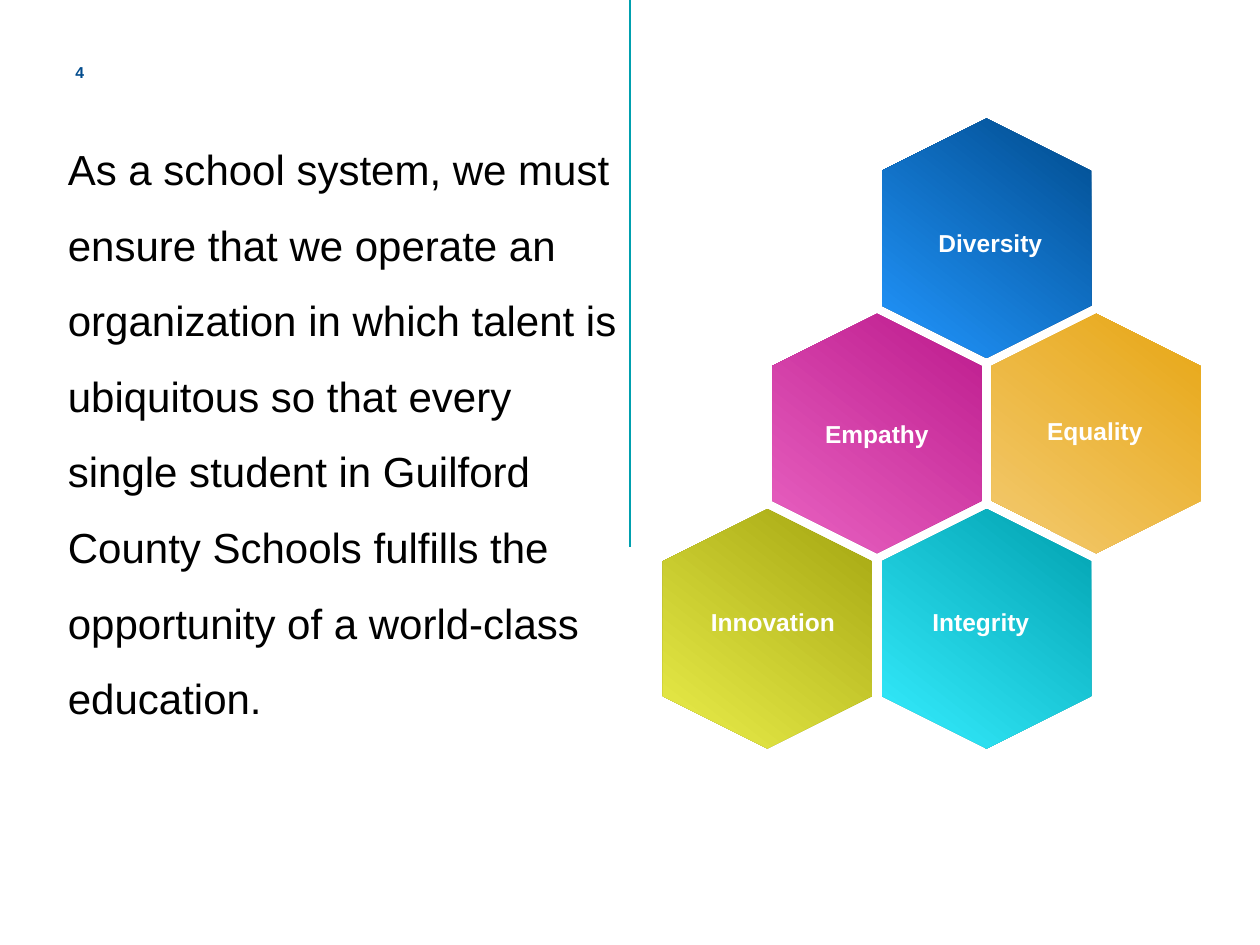
from lxml import etree
from pptx import Presentation
from pptx.dml.color import RGBColor
from pptx.enum.shapes import MSO_CONNECTOR, MSO_SHAPE
from pptx.enum.text import MSO_ANCHOR, PP_ALIGN
from pptx.oxml.ns import qn
from pptx.util import Inches, Pt

STRAIGHT = MSO_CONNECTOR.STRAIGHT
HEXAGON = MSO_SHAPE.HEXAGON
TOP, MIDDLE = MSO_ANCHOR.TOP, MSO_ANCHOR.MIDDLE
LEFT, CENTER = PP_ALIGN.LEFT, PP_ALIGN.CENTER

BLACK = RGBColor(0x00, 0x00, 0x00)
WHITE = RGBColor(0xFF, 0xFF, 0xFF)
NAVY = RGBColor(0x00, 0x4B, 0x8D)
BLUE = RGBColor(0x22, 0x97, 0xFF)
MAGENTA = RGBColor(0xBC, 0x1A, 0x8C)
PINK = RGBColor(0xE9, 0x63, 0xC2)
AMBER = RGBColor(0xE7, 0xA6, 0x14)
SAND = RGBColor(0xF3, 0xCA, 0x70)
TEAL = RGBColor(0x00, 0xA0, 0xAF)
CYAN = RGBColor(0x36, 0xEE, 0xFF)
OLIVE = RGBColor(0xA3, 0xA5, 0x10)
LIME = RGBColor(0xEB, 0xEE, 0x4B)

STATEMENT = (
    "As a school system, we must ensure that we operate an organization "
    "in which talent is ubiquitous so that every single student in Guilford "
    "County Schools fulfills the opportunity of a world-class education."
)


def add_text(page, text, area, font, align=LEFT, anchor=TOP):
    """Add a one-paragraph text box; area is left, top, width, height in inches."""
    box = page.shapes.add_textbox(*(Inches(length) for length in area))
    box.text_frame.word_wrap = True
    box.text_frame.vertical_anchor = anchor
    para = box.text_frame.paragraphs[0]
    para.alignment = align
    span = para.add_run()
    span.text = text
    for name, value in {"name": "Arial", **font}.items():
        setattr(span.font, name, value)
    return para


deck = Presentation()
deck.slide_width, deck.slide_height = Inches(10), Inches(7.5)
page = deck.slides.add_slide(deck.slide_layouts[6])

divider = page.shapes.add_connector(STRAIGHT, Inches(5), 0, Inches(5), Inches(4.34))
divider.line.color.rgb = TEAL
divider.line.width = Pt(1)
etree.SubElement(divider._element.spPr, qn("a:effectLst"))

statement = add_text(page, STATEMENT, (0.44, 0.89, 4.61, 5.77),
                     {"size": Pt(24), "color_rgb": None} and {"size": Pt(24)})
statement.line_spacing = 1.5
statement.runs[0].font.color.rgb = BLACK

number = add_text(page, "4", (0.5, 0.37, 2.33, 0.4),
                  {"size": Pt(9), "bold": True}, anchor=MIDDLE)
number.runs[0].font.color.rgb = NAVY

# Honeycomb: columns step by half a cell, rows by a fixed pitch
CELL_LEFT, CELL_TOP, HALF_STEP, ROW_STEP = 5.14, 1.06, 0.87, 1.55
CELL_WIDTH, CELL_HEIGHT = 1.9, 1.66

# word, column, row, dark, light, label left, label top, label width
values = [
    ("Diversity", 2, 0, NAVY, BLUE, 7.29, 1.76, 1.14),
    ("Empathy", 1, 1, MAGENTA, PINK, 6.39, 3.28, 1.14),
    ("Equality", 3, 1, AMBER, SAND, 8.12, 3.25, 1.14),
    ("Integrity", 2, 2, TEAL, CYAN, 7.07, 4.77, 1.43),
    ("Innovation", 0, 2, OLIVE, LIME, 5.25, 4.77, 1.77),
]
for word, column, row, dark, light, left, top, width in values:
    cell = page.shapes.add_shape(
        HEXAGON,
        Inches(CELL_LEFT + column * HALF_STEP), Inches(CELL_TOP + row * ROW_STEP),
        Inches(CELL_WIDTH), Inches(CELL_HEIGHT))
    cell.rotation = 90
    cell.shadow.inherit = False
    cell.line.fill.background()
    cell.fill.gradient()
    cell.fill.gradient_angle = 322
    for stop, color in zip(cell.fill.gradient_stops, (dark, light)):
        stop.color.rgb = color

    label = add_text(page, word, (left, top, width, 0.34),
                     {"size": Pt(14), "bold": True}, CENTER)
    label.runs[0].font.color.rgb = WHITE

deck.save("out.pptx")
